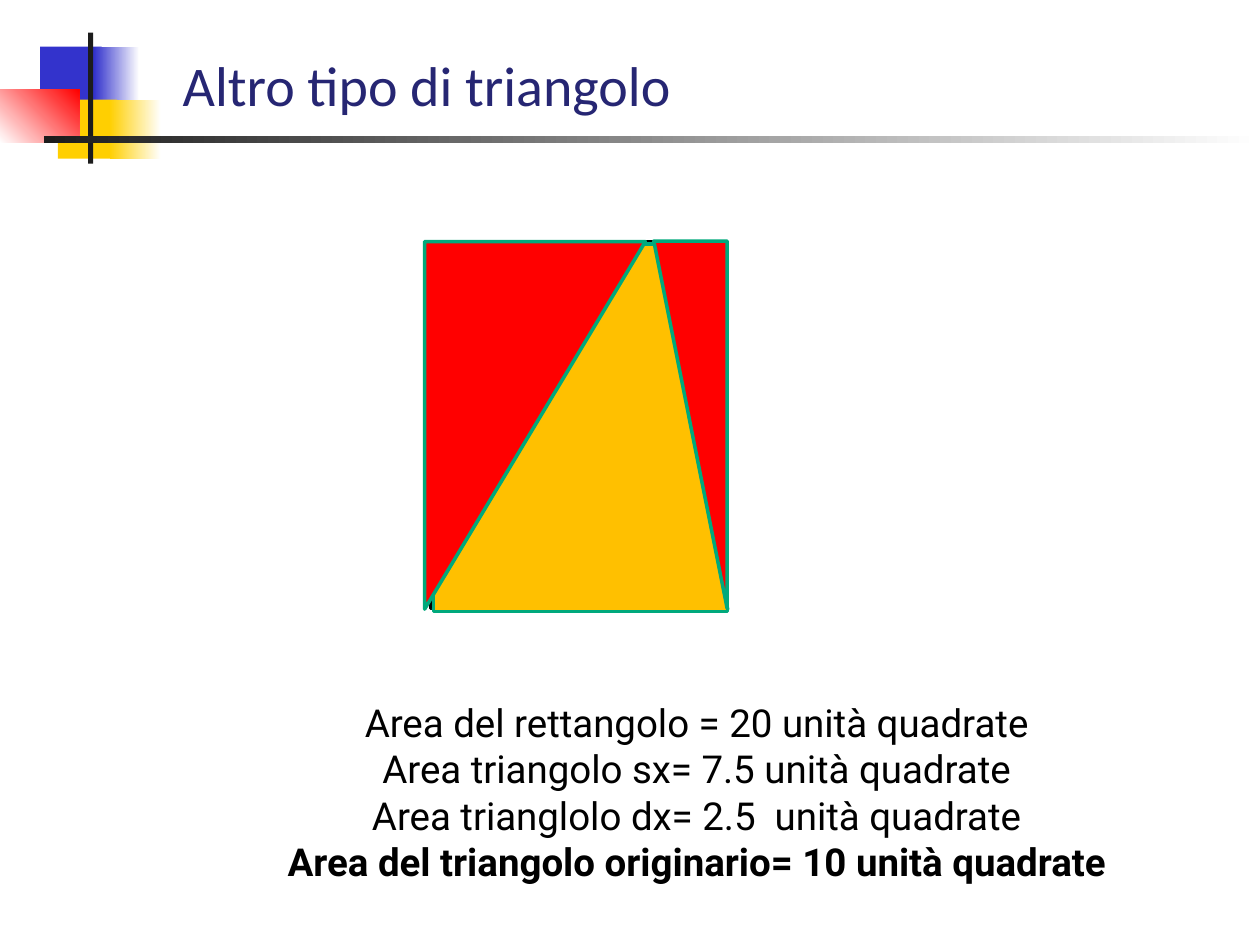
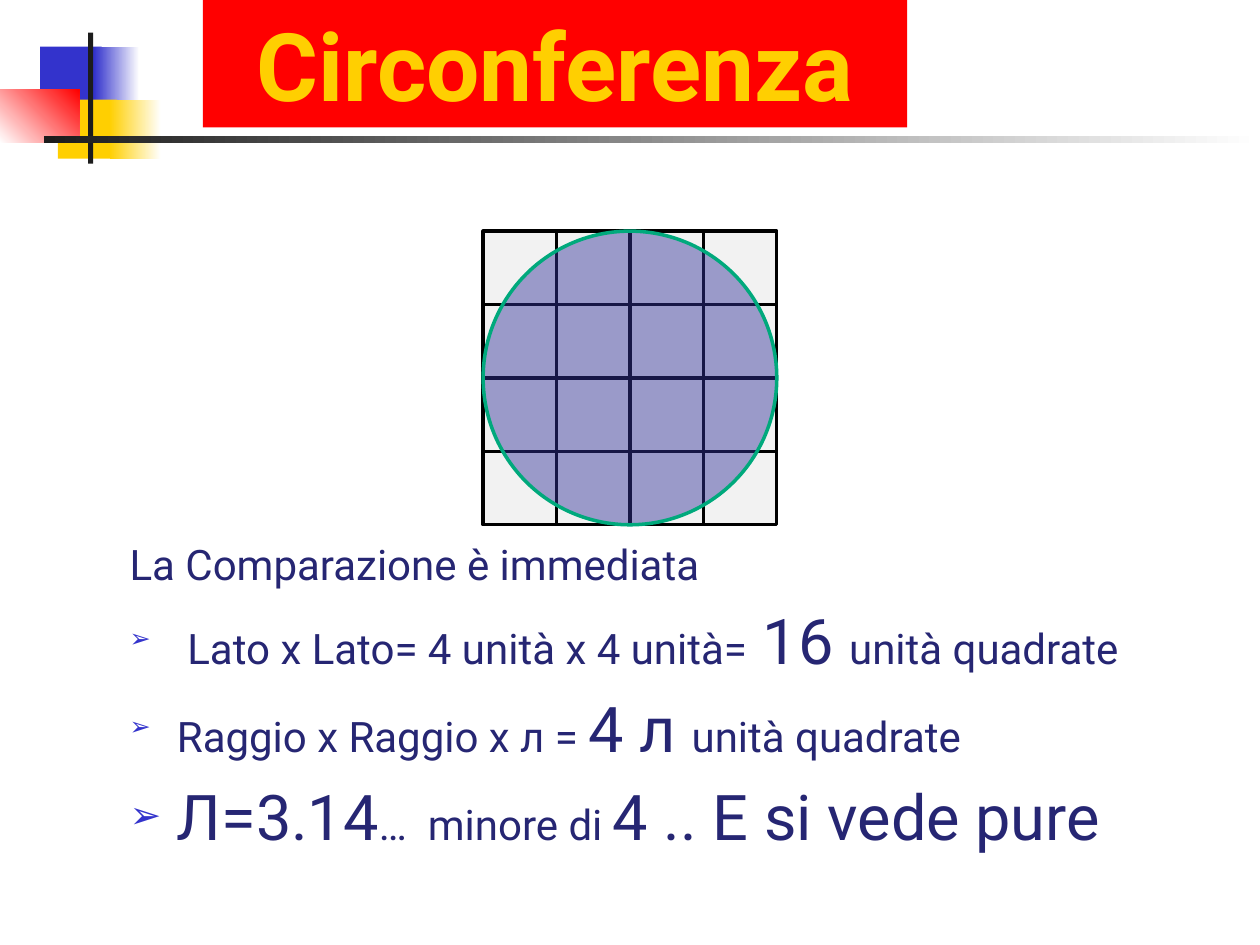
from dataclasses import dataclass

from lxml import etree
from pptx import Presentation
from pptx.dml.color import RGBColor
from pptx.enum import shapes, text
from pptx.oxml import ns
from pptx.util import Cm, Pt


@dataclass(frozen=True)
class Theme:
    heading_font: str = "Calibri"
    body_font: str = "Roboto"
    title_size: int = 32
    banner_size: int = 54
    areas_size: int = 22
    list_size: int = 24
    large_size: int = 36
    navy: str = "262673"
    blue: str = "3333CC"
    violet: str = "333399"
    yellow: str = "FFCF01"
    amber: str = "FFC000"
    red: str = "FF0000"
    green: str = "00A97C"
    dark: str = "1C1C1C"
    black: str = "000000"
    white: str = "FFFFFF"
    cell: str = "F2F2F2"


THEME = Theme()
PRESET = shapes.MSO_SHAPE
CELL = 1.48
OUTLINE = 2

# Boxes are left, top, width, height in centimetres.
TRIANGLE_TITLE = ("Altro tipo di triangolo", (3.43, 0.89, 16.48, 1.63))
CIRCLE_TITLE = ("Circonferenza", (4.09, 0, 14.2, 2.57))

AREAS_BOX = (4.24, 13.97, 19.61, 4.01)
AREAS = [
    "Area del rettangolo = 20 unità quadrate",
    "Area triangolo sx= 7.5 unità quadrate",
    "Area trianglolo dx= 2.5  unità quadrate",
    "Area del triangolo originario= 10 unità quadrate",
]

COMPARISON_BOX = (2.36, 10.72, 22.2, 5.11)
NORMAL, LARGE = THEME.list_size, THEME.large_size
COMPARISON = [  # bullet, then runs with their sizes
    (None, [("La Comparazione è immediata", NORMAL)]),
    ("➢", [(" Lato x Lato= 4 unità x 4 unità=", NORMAL), (" 16 ", LARGE),
           ("unità quadrate", NORMAL)]),
    ("➢", [("Raggio x Raggio x л = ", NORMAL), ("4 л ", LARGE),
           ("unità quadrate", NORMAL)]),
    ("➢", [("Л=3.14", LARGE), ("…  minore di ", NORMAL),
           ("4 .. E si vede pure", LARGE)]),
]

ORNAMENT = [  # box, colours (two make a gradient), gradient angle
    ((0.81, 0.94, 1.24, 1.19), (THEME.blue,), 0),
    ((1.9, 0.94, 0.91, 1.19), (THEME.blue, THEME.white), 0),
    ((1.17, 2.01, 1.19, 1.19), (THEME.yellow,), 0),
    ((2.21, 2.01, 1.04, 1.19), (THEME.yellow, THEME.white), 0),
    ((0, 1.8, 1.6, 1.07), (THEME.white, THEME.red), 45),
    ((1.78, 0.66, 0.1, 2.64), (THEME.dark,), 0),
    ((0.89, 2.75, 24.51, 0.14), (THEME.dark, THEME.white), 0),
]

GRID_ORIGIN = (9.74, 4.66)
GRID_CELLS = [(column, row) for row in range(4) for column in range(4)]
CORNER_ORIGIN = (8.68, 4.87)
CORNER_CELLS = ([(column, 0) for column in range(3, -1, -1)]
                + [(0, row) for row in range(4, 0, -1)])

TRIANGLE_FIGURE = [  # preset, box, fill, rotation, apex position
    (PRESET.ISOSCELES_TRIANGLE, (8.74, 4.87, 5.93, 7.41), THEME.violet, 0, 0.75),
    (PRESET.RECTANGLE, (8.74, 4.92, 5.93, 7.41), THEME.amber, 0, None),
    (PRESET.ISOSCELES_TRIANGLE, (8.56, 4.87, 4.45, 7.41), THEME.red, 180, 1),
    (PRESET.RIGHT_TRIANGLE, (13.18, 4.86, 1.48, 7.41), THEME.red, 180, None),
]


def rgb(colour):
    return RGBColor.from_string(colour)


def place(shape, box):
    shape.left, shape.top, shape.width, shape.height = map(Cm, box)


def paint(shape, colour):
    shape.fill.solid()
    shape.fill.fore_color.rgb = rgb(colour)


def set_font(font, name, size, colour, bold=False):
    font.name, font.size, font.bold = name, Pt(size), bold
    font.color.rgb = rgb(colour)


def add_preset(parent, preset, box, fill=None, line=None):
    shape = parent.add_shape(preset, *map(Cm, box))
    shape.shadow.inherit = False
    if fill:
        paint(shape, fill)
    if line:
        shape.line.color.rgb = rgb(line)
        shape.line.width = Pt(OUTLINE)
    else:
        shape.line.fill.background()
    return shape


def add_cells(slide, origin, cells):
    for column, row in cells:
        box = (origin[0] + column * CELL, origin[1] + row * CELL, CELL, CELL)
        add_preset(slide.shapes, PRESET.RECTANGLE, box, THEME.cell, THEME.black)


def add_ornament(slide):
    group = slide.shapes.add_group_shape()
    for box, colours, angle in ORNAMENT:
        shape = add_preset(group.shapes, PRESET.RECTANGLE, box, colours[0])
        if len(colours) > 1:
            shape.fill.gradient()
            shape.fill.gradient_angle = angle
            for stop, colour in zip(shape.fill.gradient_stops, colours):
                stop.color.rgb = rgb(colour)


def start_slide(presentation, title, body_box):
    """Add a slide with its title and ornament; return it with both text shapes."""
    slide = presentation.slides.add_slide(presentation.slide_layouts[1])
    heading, body = slide.placeholders
    words, box = title
    place(heading, box)
    place(body, body_box)
    heading.text_frame.text = words
    for shape in (heading, body):
        shape.text_frame.auto_size = text.MSO_AUTO_SIZE.NONE
    add_ornament(slide)
    return slide, heading, body


def set_bullet(paragraph, bullet):
    properties = paragraph._p.get_or_add_pPr()

    def add(tag, **attributes):
        return etree.SubElement(properties, ns.qn(tag), **attributes)

    if bullet:
        etree.SubElement(add("a:buClr"), ns.qn("a:srgbClr"), val=THEME.blue)
        add("a:buSzPct", val="60000")
        add("a:buChar", char=bullet)
    else:
        add("a:buNone")


def build_triangle_slide(presentation):
    slide, heading, body = start_slide(presentation, TRIANGLE_TITLE, AREAS_BOX)
    title = heading.text_frame.paragraphs[0]
    title.alignment = text.PP_ALIGN.LEFT
    set_font(title.font, THEME.heading_font, THEME.title_size, THEME.navy)

    add_cells(slide, CORNER_ORIGIN, CORNER_CELLS)
    for preset, box, fill, rotation, apex in TRIANGLE_FIGURE:
        shape = add_preset(slide.shapes, preset, box, fill, THEME.green)
        shape.rotation = rotation
        if apex is not None:
            shape.adjustments[0] = apex

    body.text_frame.text = "\n".join(AREAS)
    for paragraph, area in zip(body.text_frame.paragraphs, AREAS):
        paragraph.alignment = text.PP_ALIGN.CENTER
        paragraph.space_before = Pt(0)
        properties = paragraph._p.get_or_add_pPr()
        properties.set("marL", "0")
        properties.set("indent", "0")
        set_bullet(paragraph, None)
        set_font(paragraph.font, THEME.body_font, THEME.areas_size,
                 THEME.black, bold=area == AREAS[-1])


def build_circle_slide(presentation):
    slide, heading, body = start_slide(presentation, CIRCLE_TITLE, COMPARISON_BOX)
    paint(heading, THEME.red)
    title = heading.text_frame.paragraphs[0]
    title.alignment = text.PP_ALIGN.CENTER
    set_font(title.font, THEME.body_font, THEME.banner_size, THEME.yellow, bold=True)

    add_cells(slide, GRID_ORIGIN, GRID_CELLS)
    circle = add_preset(slide.shapes, PRESET.OVAL, (*GRID_ORIGIN, 4 * CELL, 4 * CELL),
                        THEME.violet, THEME.green)
    colour = circle.element.spPr.find(ns.qn("a:solidFill"))[0]
    etree.SubElement(colour, ns.qn("a:alpha"), val="46000")

    frame = body.text_frame
    for index, (bullet, runs) in enumerate(COMPARISON):
        paragraph = frame.add_paragraph() if index else frame.paragraphs[0]
        set_bullet(paragraph, bullet)
        set_font(paragraph.font, THEME.body_font, NORMAL, THEME.navy)
        for words, size in runs:
            run = paragraph.add_run()
            run.text = words
            run.font.size = Pt(size)


def main():
    presentation = Presentation()
    presentation.slide_width, presentation.slide_height = Cm(25.4), Cm(19.05)
    build_triangle_slide(presentation)
    build_circle_slide(presentation)
    presentation.save("out.pptx")


if __name__ == "__main__":
    main()
